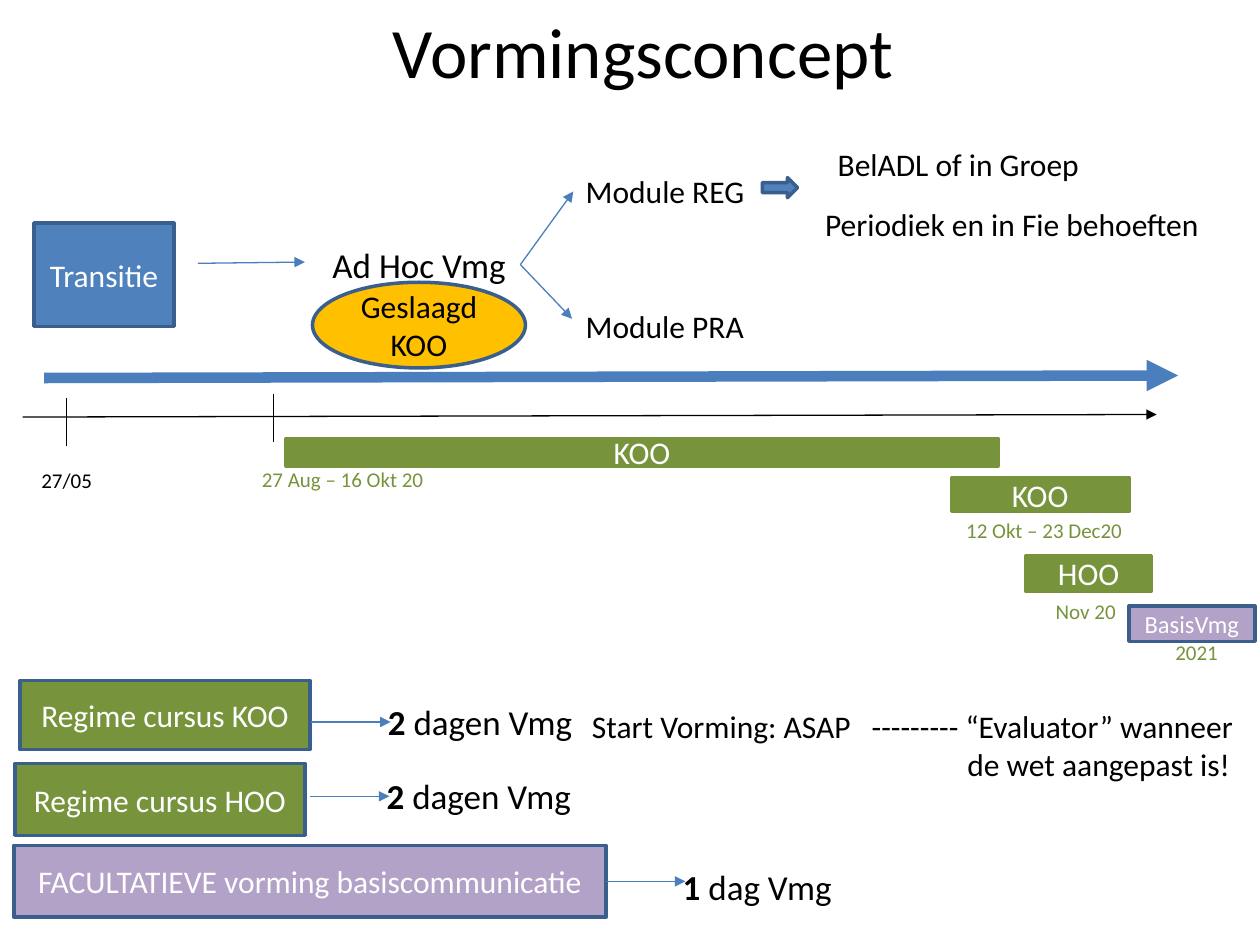
from dataclasses import dataclass

from lxml import etree
from pptx import Presentation
from pptx.dml.color import RGBColor
from pptx.enum.shapes import MSO_CONNECTOR, MSO_SHAPE
from pptx.enum.text import MSO_ANCHOR, MSO_AUTO_SIZE, PP_ALIGN
from pptx.oxml.ns import qn
from pptx.util import Inches, Pt

RECT, OVAL, ARROW = MSO_SHAPE.RECTANGLE, MSO_SHAPE.OVAL, MSO_SHAPE.RIGHT_ARROW
STRAIGHT = MSO_CONNECTOR.STRAIGHT
CENTER, LEFT = PP_ALIGN.CENTER, PP_ALIGN.LEFT
MIDDLE, TOP, BOTTOM = MSO_ANCHOR.MIDDLE, MSO_ANCHOR.TOP, MSO_ANCHOR.BOTTOM
FIT_SHAPE, NO_FIT = MSO_AUTO_SIZE.SHAPE_TO_FIT_TEXT, MSO_AUTO_SIZE.NONE
RIGHT_SIDE = 3


@dataclass(frozen=True)
class Theme:
    font: str = "Calibri"
    black: str = "000000"
    white: str = "FFFFFF"
    blue: str = "4F81BD"
    border: str = "3A5F8C"
    arrow: str = "4B7EBC"
    green: str = "77933C"
    purple: str = "B3A2C7"
    gold: str = "FFC000"
    title: float = 40.5
    large: int = 20
    body: int = 18
    small: int = 14
    date: int = 12
    outline: float = 2
    thin: float = 0.75
    thick: float = 6


T = Theme()


def rgb(color):
    return RGBColor.from_string(color)


def write(p, text, size=T.body, color=T.black, bold=False, align=LEFT):
    p.alignment = align
    r = p.add_run()
    r.text = text
    r.font.name, r.font.size, r.font.bold = T.font, Pt(size), bold
    r.font.color.rgb = rgb(color)


def add_label(s, x, y, w, h, text, lead="", **fmt):
    """Unwrapped text, optionally opened by a bold lead."""
    tf = s.shapes.add_textbox(Inches(x), Inches(y), Inches(w), Inches(h)).text_frame
    tf.word_wrap = False
    tf.auto_size = FIT_SHAPE
    if lead:
        write(tf.paragraphs[0], lead, **{**fmt, "bold": True})
    write(tf.paragraphs[0], text, **fmt)


def add_box(s, x, y, w, h, text="", fill=T.blue, line=T.border, kind=RECT,
            size=T.body, color=T.white, tight=True):
    sp = s.shapes.add_shape(kind, Inches(x), Inches(y), Inches(w), Inches(h))
    sp.shadow.inherit = False
    sp.fill.solid()
    sp.fill.fore_color.rgb = rgb(fill)
    sp.line.color.rgb = rgb(line)
    sp.line.width = Pt(T.outline)
    if text:
        tf = sp.text_frame
        tf.word_wrap = True
        tf.vertical_anchor = MIDDLE
        if tight:
            tf.margin_left = tf.margin_right = Inches(0.06)
            tf.margin_top = tf.margin_bottom = Inches(0.03)
        write(tf.paragraphs[0], text, size, color, align=CENTER)
    return sp


def add_line(s, x1, y1, x2, y2, color=T.arrow, width=T.thin, head=True):
    c = s.shapes.add_connector(STRAIGHT, Inches(x1), Inches(y1), Inches(x2), Inches(y2))
    c.line.color.rgb = rgb(color)
    c.line.width = Pt(width)
    if head:
        etree.SubElement(c.line._get_or_add_ln(), qn("a:tailEnd"), type="triangle")
    etree.SubElement(c._element.spPr, qn("a:effectLst"))
    return c


def add_title(s, x, y, w, h):
    title = s.shapes.title
    title.left, title.top, title.width, title.height = map(Inches, (x, y, w, h))
    tf = title.text_frame
    tf.vertical_anchor = BOTTOM
    tf.auto_size = NO_FIT
    write(tf.paragraphs[0], "Vormingsconcept ", T.title, align=CENTER)


def add_transition(s, x, y):
    """Transition flow that splits into two modules."""
    add_box(s, x, y + 0.67, 1.11, 0.82, "Transitie")
    add_label(s, x + 2.27, y + 0.78, 1.59, 0.44, "Ad Hoc Vmg", size=T.large)
    for dx, dy, w, text in (
        (4.28, 0.22, 1.48, "Module REG"),
        (4.28, 1.29, 1.47, "Module PRA"),
        (6.28, 0, 2.14, "BelADL of in Groep"),
        (6.18, 0.48, 3.21, "Periodiek en in Fie behoeften"),
    ):
        add_label(s, x + dx, y + dy, w, 0.4, text)
    add_line(s, x + 1.3, y + 0.99, x + 2.15, y + 0.98)
    for dx, dy in ((4.28, 0.42), (4.27, 1.43)):
        add_line(s, x + 3.86, y + 1, x + dx, y + dy)
    add_box(s, x + 5.78, y + 0.31, 0.28, 0.16, kind=ARROW)
    add_box(s, x + 2.21, y + 1.14, 1.69, 0.68, "Geslaagd KOO", fill=T.gold,
            kind=OVAL, color=T.black, tight=False)


def add_timeline(s, x, y):
    """Two time arrows, date ticks and the course bars."""
    add_line(s, x + 0.17, y, x + 9.17, y - 0.02, width=T.thick)
    add_line(s, x, y + 0.31, x + 9, y + 0.29, T.black)
    for dx, dy in ((0.35, 0.16), (1.99, 0.13)):
        add_line(s, x + dx, y + dy + 0.38, x + dx, y + dy, T.black, head=False)
    for dx, dy, w, h, text in (
        (2.09, 0.48, 5.65, 0.22, "KOO"),
        (7.37, 0.79, 1.41, 0.27, "KOO"),
        (7.96, 1.41, 1, 0.28, "HOO"),
    ):
        add_box(s, x + dx, y + dy, w, h, text, T.green, T.green, tight=False)
    add_box(s, x + 8.78, y + 1.81, 1, 0.28, "BasisVmg", T.purple, size=T.small)
    for dx, dy, w, text, color in (
        (0.05, 0.66, 0.61, "27/05", T.black),
        (1.8, 0.65, 1.5, "27 Aug – 16 Okt 20", T.green),
        (7.39, 1.06, 1.46, "12 Okt – 23 Dec20", T.green),
        (8.1, 1.7, 0.69, "Nov 20", T.green),
        (9.05, 2.03, 0.55, "2021", T.green),
    ):
        add_label(s, x + dx, y + dy, w, 0.3, text, size=T.date, color=color)


def add_regime(s, x, y, w, h, text, fill, lead, rest, start, label_y, label_w,
               joined=False):
    """Course box, arrow and number of days."""
    box = add_box(s, x, y, w, h, text, fill)
    arrow_y = y + h / 2 if joined else label_y + 0.22
    arrow = add_line(s, start, arrow_y, start + 0.63, arrow_y)
    if joined:
        arrow.begin_connect(box, RIGHT_SIDE)
    add_label(s, start + 0.51, label_y, label_w, 0.44, rest, lead, size=T.large)


def add_start_note(s, x, y, w, h):
    """Start note with a tabbed dash and an indented second line."""
    tf = s.shapes.add_textbox(Inches(x), Inches(y), Inches(w), Inches(h)).text_frame
    tf.word_wrap = True
    tf.vertical_anchor = TOP
    first, second = tf.paragraphs[0], tf.add_paragraph()
    tabs = etree.SubElement(first._p.get_or_add_pPr(), qn("a:tabLst"))
    etree.SubElement(tabs, qn("a:tab"), pos=str(Inches(2.22)), algn="l")
    second._p.get_or_add_pPr().set("marL", str(Inches(2.98)))
    write(first, "Start Vorming: ASAP\t--------- “Evaluator” wanneer")
    write(second, "de wet aangepast is!")


def main():
    prs = Presentation()
    prs.slide_width, prs.slide_height = Inches(10), Inches(7.5)
    s = prs.slides.add_slide(prs.slide_layouts[5])
    add_title(s, 2.36, 0.33, 5.62, 0.46)
    add_transition(s, 0.27, 1.1)
    add_timeline(s, 0.18, 3)
    add_regime(s, 0.16, 5.4, 2.3, 0.55, "Regime cursus KOO", T.green,
               "2", " dagen Vmg", 2.47, 5.51, 1.68)
    add_regime(s, 0.12, 6.06, 2.3, 0.57, "Regime cursus HOO", T.green,
               "2", " dagen Vmg", 2.46, 6.1, 1.68)
    add_regime(s, 0.11, 6.71, 4.7, 0.57, "FACULTATIEVE vorming basiscommunicatie",
               T.purple, "1", " dag Vmg", 4.81, 6.82, 1.39, joined=True)
    add_start_note(s, 4.6, 5.56, 5.4, 1.01)
    prs.save("out.pptx")


if __name__ == "__main__":
    main()
